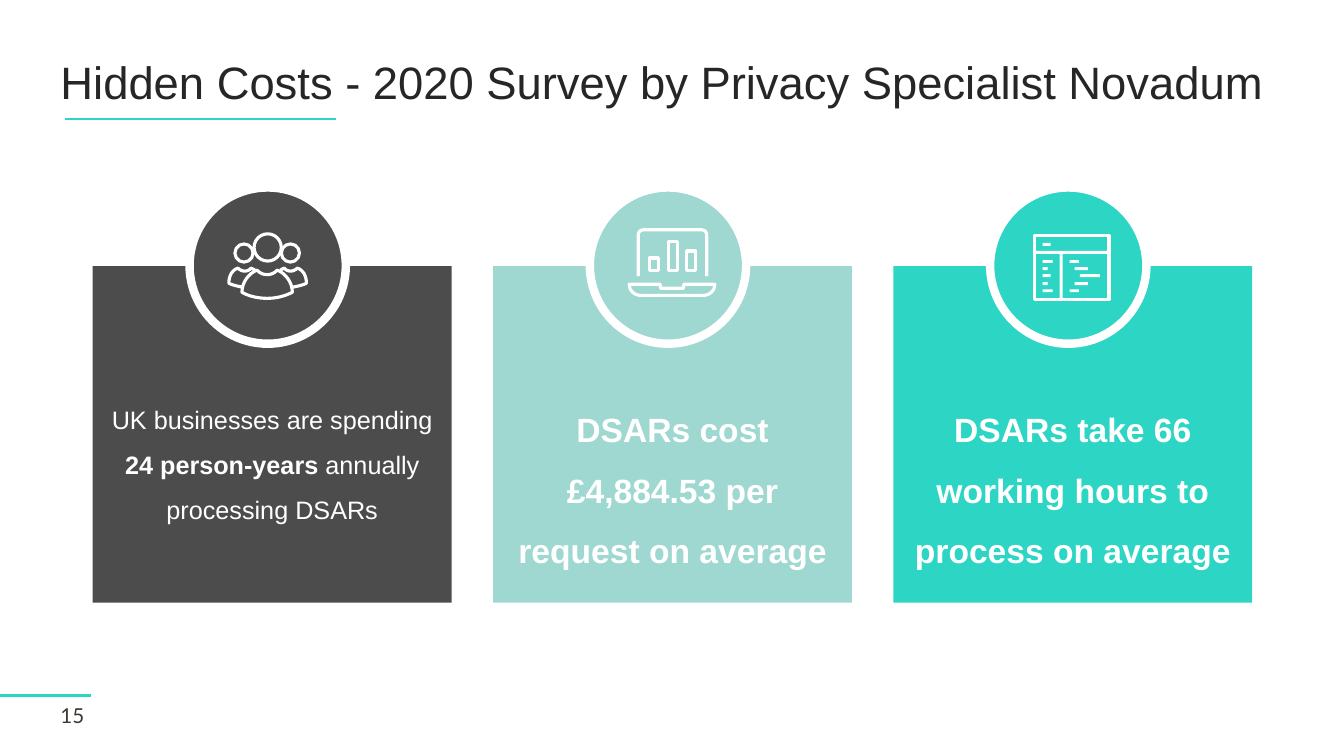
from lxml.etree import SubElement
from pptx import Presentation
from pptx.dml.color import RGBColor
from pptx.enum.shapes import MSO_CONNECTOR, MSO_SHAPE
from pptx.enum.text import MSO_ANCHOR, MSO_AUTO_SIZE, PP_ALIGN
from pptx.oxml.ns import qn
from pptx.util import Emu, Pt

PX = 9144
COLORS = {
    "teal": "2CD5C4",
    "mint": "9FD8D1",
    "charcoal": "4C4C4C",
    "white": "FFFFFF",
    "title": "262626",
    "number": "3E3935",
}
STROKE = 2.25

CENTRE_BODY = [
    [(67, 82)],
    [(72, 88), (82, 88), (87, 82)],
    [(95, 85), (102, 94), (102, 104)],
    [(94, 108), (86, 110), (77, 110)],
    [(68, 110), (59, 108), (52, 104)],
    [(52, 94), (59, 85), (67, 82)],
]
SIDE_BODY = [
    [(53, 99)],
    [(48, 98), (43, 97), (39, 95)],
    [(39, 88), (42, 82), (48, 80)],
    [(52, 84), (58, 84), (61, 80)],
    [(65, 82)],
]
LAPTOP_SCREEN = [
    [(48, 88)], [(48, 48)],
    [(48, 44), (50, 42), (54, 42)],
    [(110, 42)],
    [(114, 42), (116, 44), (116, 48)],
    [(116, 88)],
]
LAPTOP_BASE = [
    [(39, 96)], [(70, 96)], [(70, 100)], [(93, 100)], [(93, 96)], [(124, 96)],
    [(124, 102), (119, 107), (113, 107)],
    [(50, 107)],
    [(44, 107), (39, 102), (39, 96)],
]


def rgb(name):
    """Return the named colour."""
    return RGBColor.from_string(COLORS[name])


def paint(shape, fill=None, line=None, width=STROKE):
    """Set the fill and line of a shape."""
    shape.shadow.inherit = False
    if fill:
        shape.fill.solid()
        shape.fill.fore_color.rgb = rgb(fill)
    else:
        shape.fill.background()
    if line:
        shape.line.color.rgb = rgb(line)
        shape.line.width = Pt(width)
    else:
        shape.line.fill.background()


def add_preset(slide, kind, box, **style):
    """Add a painted preset shape in a px box."""
    shape = slide.shapes.add_shape(kind, *(Emu(value * PX) for value in box))
    paint(shape, **style)


def add_rule(slide, left, right, y):
    """Add a horizontal teal line."""
    ends = (Emu(value * PX) for value in (left, y, right, y))
    line = slide.shapes.add_connector(MSO_CONNECTOR.STRAIGHT, *ends)
    line.line.color.rgb = rgb("teal")
    line.line.width = Pt(1.5)
    SubElement(line._element.spPr, qn("a:effectLst"))


def add_text(slide, box, runs, size, color, font="Arial", spacing=None):
    """Add a wrapped paragraph made of (text, bold) runs."""
    shape = slide.shapes.add_textbox(*(Emu(value * PX) for value in box))
    frame = shape.text_frame
    frame.word_wrap = True
    paragraph = frame.paragraphs[0]
    paragraph.line_spacing = spacing
    for text, bold in runs:
        run = paragraph.add_run()
        run.text = text
        run.font.name = font
        run.font.size = Pt(size)
        run.font.bold = bold
        run.font.color.rgb = rgb(color)
    return frame


def trace(segments, steps=8):
    """Turn line and cubic curve segments into a list of points."""
    points = list(segments[0])
    for segment in segments[1:]:
        if len(segment) == 1:
            points += segment
            continue
        controls = [points[-1], *segment]
        for step in range(1, steps + 1):
            t = step / steps
            weights = ((1 - t) ** 3, 3 * t * (1 - t) ** 2, 3 * t * t * (1 - t), t ** 3)
            points.append(tuple(
                sum(weight * point[axis] for weight, point in zip(weights, controls))
                for axis in (0, 1)
            ))
    return points


def add_outline(slide, left, top, points):
    """Draw a white outline through points relative to left and top."""
    placed = [(round((left + x) * PX), round((top + y) * PX)) for x, y in points]
    builder = slide.shapes.build_freeform(*placed[0])
    builder.add_line_segments(placed[1:], close=placed[0] == placed[-1])
    paint(builder.convert_to_shape(), line="white")


def people_icon(slide, left, top):
    """Draw three people."""
    for x, y, size in ((45, 56, 18), (91, 56, 18), (64, 46, 27)):
        add_preset(slide, MSO_SHAPE.OVAL, (left + x, top + y, size, size), line="white")
    side = trace(SIDE_BODY)
    mirrored = [(155 - x, y) for x, y in side]
    for points in (side, mirrored, trace(CENTRE_BODY)):
        add_outline(slide, left, top, points)


def laptop_icon(slide, left, top):
    """Draw a laptop showing a bar chart."""
    add_outline(slide, left, top, trace(LAPTOP_SCREEN))
    add_outline(slide, left, top, trace(LAPTOP_BASE))
    for x, y in ((59, 70), (78, 54), (96, 63)):
        box = (left + x, top + y, 9, 82 - y)
        add_preset(slide, MSO_SHAPE.RECTANGLE, box, line="white")


def browser_icon(slide, left, top):
    """Draw a window with two columns of lines."""
    frame = (left + 44, top + 48, 74, 63)
    add_preset(slide, MSO_SHAPE.RECTANGLE, frame, line="white")
    bars = [(44, 63, 74, 3), (69, 66, 3, 45), (52, 55, 8, 3)]
    columns = zip((10, 5, 8, 5, 10), (79, 84, 89, 84, 79), (9, 13, 20, 13, 9))
    for row, (short, x, width) in enumerate(columns):
        y = round(72 + 7.25 * row)
        bars += [(52, y, short, 3), (x, y, width, 3)]
    for x, y, width, height in bars:
        box = (left + x, top + y, width, height)
        add_preset(slide, MSO_SHAPE.RECTANGLE, box, fill="white")


def add_header(slide, left, top, width, height):
    """Add the title and its underline."""
    add_rule(slide, left + 11, left + 280, top + 78)
    runs = [("Hidden Costs - 2020 Survey by Privacy Specialist Novadum", False)]
    frame = add_text(slide, (left, top, width, height), runs, 32.4, "title", spacing=0.9)
    frame.vertical_anchor = MSO_ANCHOR.MIDDLE
    frame.margin_left = frame.margin_right = Emu(7 * PX)
    frame.margin_top = frame.margin_bottom = Emu(4 * PX)


def add_footer(slide, left, top, width, height):
    """Add the slide number and the line above it."""
    add_rule(slide, 0, 90, top - 8)
    runs = [("15", False)]
    frame = add_text(slide, (left, top, width, height), runs, 14.7, "number", "Lato")
    frame.vertical_anchor = MSO_ANCHOR.MIDDLE
    frame.margin_left = frame.margin_right = Emu(7 * PX)
    frame.margin_top = frame.margin_bottom = Emu(4 * PX)


def add_card(slide, box, color, icon, runs, size, text_height):
    """Add a coloured card with its text and a round icon on the top edge."""
    left, top, width, height = box
    add_preset(slide, MSO_SHAPE.RECTANGLE, box, fill=color)
    text_box = (left + 9, top + 117, width - 18, text_height)
    frame = add_text(slide, text_box, runs, size, "white", spacing=1.5)
    frame.auto_size = MSO_AUTO_SIZE.SHAPE_TO_FIT_TEXT
    frame.paragraphs[0].alignment = PP_ALIGN.CENTER
    circle = (left + 96, top - 78, 155, 155)
    add_preset(slide, MSO_SHAPE.OVAL, circle, fill=color, line="white", width=6)
    icon(slide, *circle[:2])


def main():
    """Build and save the slide."""
    presentation = Presentation()
    presentation.slide_width = Emu(1333 * PX)
    presentation.slide_height = Emu(750 * PX)
    slide = presentation.slides.add_slide(presentation.slide_layouts[6])
    add_header(slide, 53, 40, 1224, 88)
    add_footer(slide, 53, 698, 57, 24)
    spending = [
        ("UK businesses are spending ", False),
        ("24 person-years ", True),
        ("annually processing DSARs", False),
    ]
    cost = [("DSARs cost £4,884.53 per request on average", True)]
    hours = [("DSARs take 66 working hours to process on average", True)]
    cards = [
        ("charcoal", people_icon, spending, 18, 146),
        ("mint", laptop_icon, cost, 24, 184),
        ("teal", browser_icon, hours, 24, 186),
    ]
    for index, card in enumerate(cards):
        add_card(slide, (92 + 397 * index, 264, 356, 334), *card)
    presentation.save("out.pptx")


if __name__ == "__main__":
    main()
